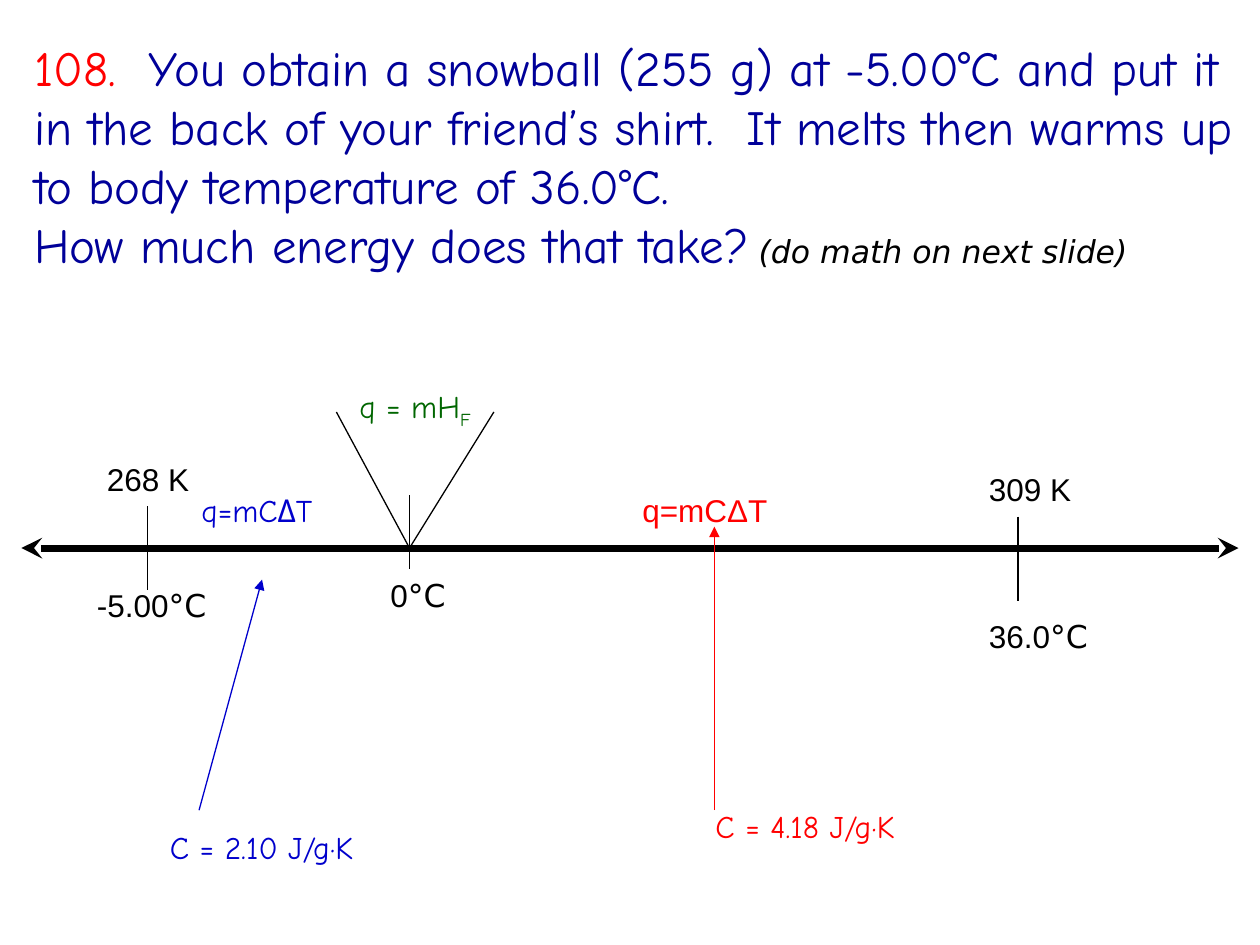
from dataclasses import dataclass

from lxml.etree import SubElement
from pptx import Presentation
from pptx.dml.color import RGBColor
from pptx.enum.shapes import MSO_CONNECTOR
from pptx.enum.text import MSO_ANCHOR, MSO_AUTO_SIZE, PP_ALIGN
from pptx.oxml.ns import qn
from pptx.util import Inches, Pt


@dataclass(frozen=True)
class Theme:
    black: str = "000000"
    navy: str = "000099"
    blue: str = "0000CC"
    green: str = "006600"
    red: str = "FF0000"
    hand: str = "Comic Neue"
    plain: str = "Arial"
    symbol: str = "DejaVu Sans"
    question_size: int = 28
    label_size: int = 18
    thin: float = 0.75
    thick: float = 4


THEME = Theme()
AXIS_Y = 4.35
MELTING_X = 3.25
LABEL_HEIGHT = 0.4


def add_run(paragraph, text, font, color, size=THEME.label_size, italic=None):
    run = paragraph.add_run()
    run.text = text
    run.font.name = font
    run.font.size = Pt(size)
    run.font.color.rgb = RGBColor.from_string(color)
    run.font.italic = italic
    return run


def add_question(slide):
    title = slide.shapes.title
    title.left, title.top = Inches(0.17), Inches(0.25)
    title.width, title.height = Inches(9.83), Inches(2.29)
    frame = title.text_frame
    frame.word_wrap = True
    frame.auto_size = MSO_AUTO_SIZE.NONE
    frame.vertical_anchor = MSO_ANCHOR.TOP
    paragraph = frame.paragraphs[0]
    paragraph.alignment = PP_ALIGN.LEFT
    size = THEME.question_size
    add_run(paragraph, "108.  ", THEME.hand, THEME.red, size)
    add_run(paragraph, "You obtain a snowball (255 g) at -5.00°C and put it in the back "
            "of your friend’s shirt.  It melts then warms up to body temperature of 36.0°C.",
            THEME.hand, THEME.navy, size)
    paragraph.add_line_break()
    add_run(paragraph, "How much energy does that take?", THEME.hand, THEME.navy, size)
    add_run(paragraph, " ", THEME.symbol, THEME.navy)
    add_run(paragraph, "(do math on next slide)", THEME.symbol, THEME.black, italic=True)


def add_label(slide, left, top, width, text, font=THEME.plain, color=THEME.black):
    """Add a one-line label and return its paragraph for further runs."""
    box = slide.shapes.add_textbox(Inches(left), Inches(top), Inches(width), Inches(LABEL_HEIGHT))
    frame = box.text_frame
    frame.word_wrap = True
    frame.auto_size = MSO_AUTO_SIZE.SHAPE_TO_FIT_TEXT
    paragraph = frame.paragraphs[0]
    add_run(paragraph, text, font, color)
    return paragraph


def add_celsius_label(slide, left, top, width, degrees):
    paragraph = add_label(slide, left, top, width, degrees)
    add_run(paragraph, "°C", THEME.symbol, THEME.black)


def add_fusion_label(slide):
    paragraph = add_label(slide, 2.67, 3.02, 1.33, " q = mH", THEME.hand, THEME.green)
    subscript = add_run(paragraph, "F", THEME.hand, THEME.green)
    subscript.font._element.set("baseline", "-25000")


def add_line(slide, start, end, color=THEME.black, width=THEME.thin, head=None, tail=None):
    connector = slide.shapes.add_connector(
        MSO_CONNECTOR.STRAIGHT, *(Inches(value) for value in (*start, *end)))
    connector.line.color.rgb = RGBColor.from_string(color)
    connector.line.width = Pt(width)
    outline = connector.line._get_or_add_ln()
    for tag, arrow in (("a:headEnd", head), ("a:tailEnd", tail)):
        if arrow:
            SubElement(outline, qn(tag), type=arrow)
    SubElement(connector._element.spPr, qn("a:effectLst"))


def add_temperature_line(slide):
    add_line(slide, (0.17, AXIS_Y), (9.83, AXIS_Y), width=THEME.thick,
             head="stealth", tail="stealth")
    for x, top, bottom in ((1.17, 4.02, 4.68), (MELTING_X, 3.93, 4.52), (8.08, 4.1, 4.77)):
        add_line(slide, (x, top), (x, bottom))
    for x in (2.67, 3.92):
        add_line(slide, (x, 3.27), (MELTING_X, AXIS_Y))

    add_label(slide, 0.75, 3.6, 1, "268 K")
    add_label(slide, 7.75, 3.68, 1.17, "309 K")
    add_celsius_label(slide, 0.67, 4.6, 1.08, "-5.00")
    add_celsius_label(slide, 3, 4.52, 0.67, "0")
    add_celsius_label(slide, 7.75, 4.85, 1.67, "36.0")


def add_heat_formulas(slide):
    add_label(slide, 1.5, 3.85, 1.25, "q=mCΔT", THEME.hand, THEME.blue)
    add_fusion_label(slide)
    add_label(slide, 5, 3.85, 1.5, "q=mCΔT", THEME.plain, THEME.red)

    add_label(slide, 1.25, 6.52, 1.83, "C = 2.10 J/g·K", THEME.hand, THEME.blue)
    add_line(slide, (1.58, 6.43), (2.08, 4.6), THEME.blue, tail="triangle")
    add_label(slide, 5.58, 6.36, 2.08, "C = 4.18 J/g·K", THEME.hand, THEME.red)
    add_line(slide, (5.67, 6.43), (5.67, 4.18), THEME.red, tail="triangle")


def main():
    presentation = Presentation()
    presentation.slide_width = Inches(10)
    presentation.slide_height = Inches(7.5)
    slide = presentation.slides.add_slide(presentation.slide_layouts.get_by_name("Title Only"))
    add_question(slide)
    add_temperature_line(slide)
    add_heat_formulas(slide)
    presentation.save("out.pptx")


if __name__ == "__main__":
    main()
